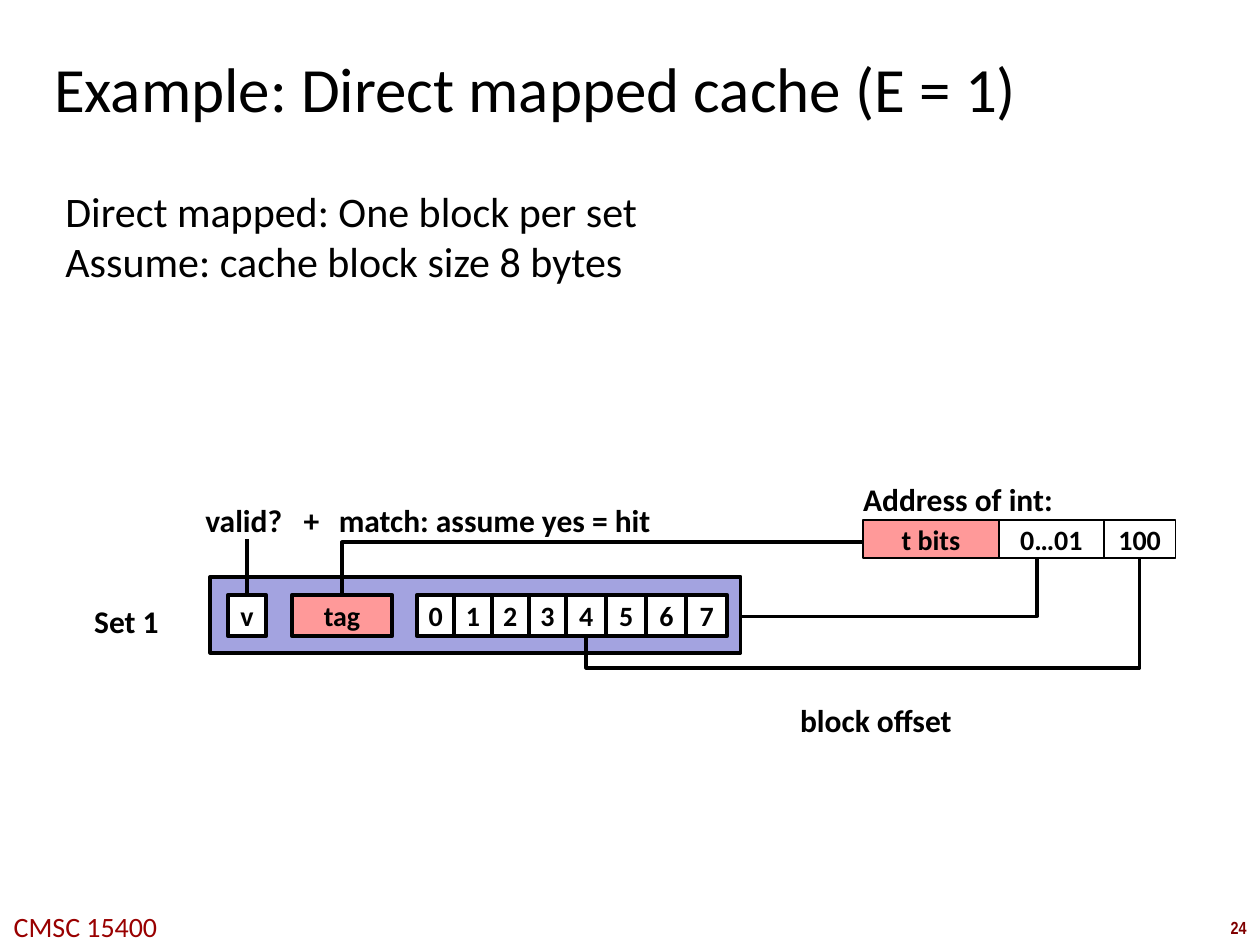
"""Build the slide on a direct mapped cache lookup."""
from lxml.etree import SubElement
from pptx import Presentation
from pptx.dml.color import RGBColor
from pptx.enum.shapes import MSO_CONNECTOR as Link, MSO_SHAPE as Shape
from pptx.enum.text import MSO_ANCHOR as Anchor, MSO_AUTO_SIZE as Fit, PP_ALIGN as Align
from pptx.oxml.ns import qn
from pptx.util import Cm, Pt

COLORS = {"black": "000000", "white": "FFFFFF", "pink": "FF9999", "lilac": "A3A3E0",
          "page": "800000", "course": "990000"}
TITLE = "Example: Direct mapped cache (E = 1)"
FACTS = ["Direct mapped: One block per set", "Assume: cache block size 8 bytes"]
LABELS = [
    ("Address of int:", 17.15, 9.55, 4.37),
    ("match: assume yes = hit", 6.58, 9.98, 6.86),
    ("valid?\t+", 3.89, 9.98, 2.84),
    ("block offset", 15.88, 14, 3.61),
    ("Set 1", 1.65, 12.01, 1.83),
]
ADDRESS = [("t bits", 2.74, "pink"), ("0…01", 2.11, "white"), ("100", 1.45, "white")]
ADDRESS_LEFT, ADDRESS_TOP, ADDRESS_HEIGHT = 17.4, 10.49, 0.76
SET_BOX = (4.24, 11.63, 10.69, 1.53)
CELL_TOP, CELL_HEIGHT = 11.99, 0.84
BYTES_LEFT, BYTE_WIDTHS = 8.41, [0.75] * 4 + [0.81] * 4
VALID_TOP, OFFSET_DROP = 10.87, 1.4


def color(name):
    return RGBColor.from_string(COLORS[name])


def style(para, size, tint="black", bold=False, name="Calibri"):
    font = para.font
    font.size, font.bold, font.name = Pt(size), bold, name
    font.color.rgb = color(tint)


def add_text(page, lines, left, top, width, height, size, wrap=False, align=Align.LEFT, **look):
    box = page.shapes.add_textbox(Cm(left), Cm(top), Cm(width), Cm(height))
    frame = box.text_frame
    frame.word_wrap = wrap
    frame.auto_size = Fit.SHAPE_TO_FIT_TEXT
    frame.text = "\n".join(lines)
    for para in frame.paragraphs:
        para.alignment = align
        if "\t" in para.text:
            tabs = SubElement(para._p.get_or_add_pPr(), qn("a:tabLst"))
            SubElement(tabs, qn("a:tab"), pos=str(Cm(1.98)), algn="l")
        style(para, size, **look)
    return frame


def add_box(page, left, top, width, height, fill, weight, text=""):
    box = page.shapes.add_shape(Shape.RECTANGLE, Cm(left), Cm(top), Cm(width), Cm(height))
    box.shadow.inherit = False
    box.fill.solid()
    box.fill.fore_color.rgb = color(fill)
    box.line.color.rgb = color("black")
    box.line.width = Pt(weight)
    if text:
        frame = box.text_frame
        frame.word_wrap = False
        frame.vertical_anchor = Anchor.MIDDLE
        para = frame.paragraphs[0]
        para.text, para.alignment = text, Align.CENTER
        style(para, 16, bold=True)
    return box


def add_link(page, kind, start, end):
    link = page.shapes.add_connector(kind, *start, *end)
    link.line.color.rgb = color("black")
    link.line.width = Pt(2)
    SubElement(link._element.spPr, qn("a:effectLst"))
    return link


def add_elbow(page, start, end, preset, downward=False, bend=None):
    if downward:
        middle = [(a + b) // 2 for a, b in zip(start, end)]
        half_run, half_drop = (start[0] - end[0]) // 2, (end[1] - start[1]) // 2
        start = (middle[0] - half_drop, middle[1] - half_run)
        end = (middle[0] + half_drop, middle[1] + half_run)
    properties = add_link(page, Link.ELBOW, start, end)._element.spPr
    if downward:
        properties.find(qn("a:xfrm")).set("rot", "5400000")
    geometry = properties.find(qn("a:prstGeom"))
    geometry.set("prst", preset)
    if bend:
        SubElement(geometry.find(qn("a:avLst")), qn("a:gd"),
                   name="adj1", fmla=f"val {round(bend * 100000)}")


def side(box, across, down):
    return int(box.left + box.width * across), int(box.top + box.height * down)


def main():
    deck = Presentation()
    deck.slide_width, deck.slide_height = Cm(25.4), Cm(19.05)
    page = deck.slides.add_slide(deck.slide_layouts[6])

    title = add_text(page, [TITLE], 0.99, 0.71, 21.08, 2.11, 36, wrap=True)
    title.auto_size = Fit.NONE
    title.vertical_anchor = Anchor.MIDDLE
    title.margin_left = title.margin_right = title.margin_top = title.margin_bottom = Cm(0.1)
    add_text(page, FACTS, 1.07, 3.61, 12.12, 2.31, 24, wrap=True)
    add_text(page, ["24"], 24.54, 18.36, 0.86, 0.69, 10, align=Align.CENTER,
             tint="page", bold=True, name="Arial Narrow")
    add_text(page, ["CMSC 15400"], -0.08, 18.21, 3.61, 0.94, 16, align=Align.CENTER, tint="course")

    fields, left = [], ADDRESS_LEFT
    for text, width, fill in ADDRESS:
        fields.append(add_box(page, left, ADDRESS_TOP, width, ADDRESS_HEIGHT, fill, 1, text))
        left += width
    tag_bits, set_index, offset = fields

    cache_set = add_box(page, *SET_BOX, "lilac", 2.25)
    valid = add_box(page, 4.6, CELL_TOP, 0.76, CELL_HEIGHT, "white", 2.25, "v")
    tag = add_box(page, 5.89, CELL_TOP, 2.01, CELL_HEIGHT, "pink", 2.25, "tag")
    cells, left = [], BYTES_LEFT
    for number, width in enumerate(BYTE_WIDTHS):
        cells.append(add_box(page, left, CELL_TOP, width, CELL_HEIGHT, "white", 2.25, str(number)))
        left += width

    valid_end = side(valid, 0.5, 0)
    add_link(page, Link.STRAIGHT, (valid_end[0], Cm(VALID_TOP)), valid_end).end_connect(valid, 0)
    add_elbow(page, side(tag_bits, 0, 0.58), side(tag, 0.5, 0), "bentConnector2")
    add_elbow(page, side(set_index, 0.36, 1), side(cache_set, 1, 0.52), "bentConnector2", True)
    add_elbow(page, side(offset, 0.5, 1), side(cells[4], 0.5, 1), "bentConnector3", True, OFFSET_DROP)

    for text, left, top, width in LABELS:
        add_text(page, [text], left, top, width, 1.02, 18, bold=True)

    deck.save("out.pptx")


if __name__ == "__main__":
    main()
